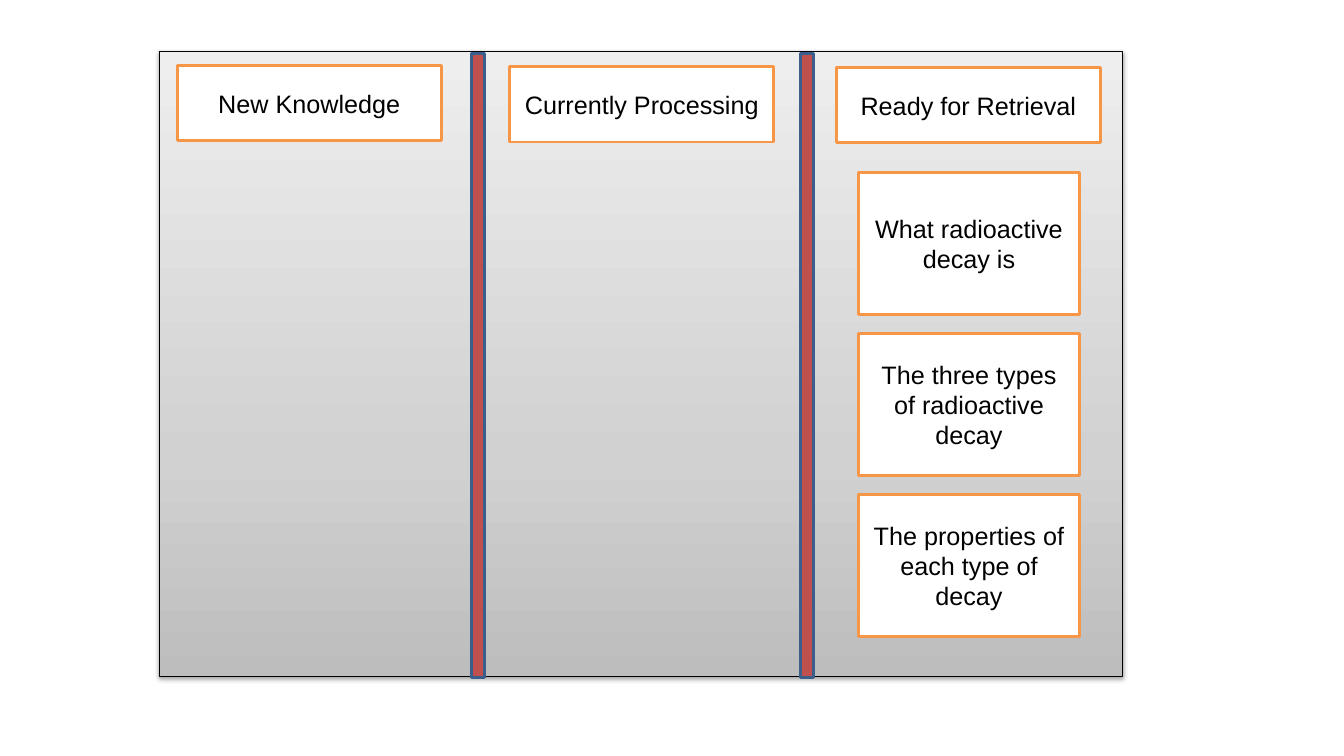
import lxml.etree
import pptx
import pptx.dml.color
import pptx.enum.shapes
import pptx.enum.text
import pptx.oxml.ns
import pptx.util

Cm = pptx.util.Cm
Pt = pptx.util.Pt
RGBColor = pptx.dml.color.RGBColor
qn = pptx.oxml.ns.qn

BLACK = RGBColor(0x00, 0x00, 0x00)
WHITE = RGBColor(0xFF, 0xFF, 0xFF)
ORANGE = RGBColor(0xF7, 0x96, 0x46)
RED = RGBColor(0xC0, 0x50, 0x4D)
BLUE = RGBColor(0x3A, 0x5F, 0x8C)
BOARD_STOPS = [
    (0, RGBColor(0xBD, 0xBD, 0xBD)),
    (35, RGBColor(0xD1, 0xD1, 0xD1)),
    (100, RGBColor(0xEE, 0xEE, 0xEE)),
]

FONT_FORMAT = {"name": "Arial", "size": Pt(18)}
FRAME_FORMAT = {
    "word_wrap": True,
    "vertical_anchor": pptx.enum.text.MSO_ANCHOR.MIDDLE,
}

HEADINGS = [
    ("New Knowledge", 4.47, 1.65),
    ("Currently Processing", 12.85, 1.68),
    ("Ready for Retrieval", 21.08, 1.7),
]
CARDS = [
    "What radioactive decay is",
    "The three types of radioactive decay",
    "The properties of each type of decay",
]
DIVIDER_LEFTS = [11.89, 20.17]
CARD_TOP = 4.34
CARD_PITCH = 4.06


def set_attributes(target, values):
    for name, value in values.items():
        setattr(target, name, value)


def add_rectangle(slide, left, top, width, height, line_color, line_width):
    shape = slide.shapes.add_shape(
        pptx.enum.shapes.MSO_SHAPE.RECTANGLE,
        Cm(left), Cm(top), Cm(width), Cm(height),
    )
    shape.line.color.rgb = line_color
    shape.line.width = Pt(line_width)
    shape.shadow.inherit = False
    return shape


def add_color(parent, color):
    return lxml.etree.SubElement(parent, qn("a:srgbClr"), val=str(color))


def add_board(slide):
    shape = add_rectangle(slide, 4.01, 1.3, 24.28, 15.75, BLACK, 0.75)
    shape.fill.gradient()
    shape.fill.gradient_angle = 90
    properties = shape._element.spPr
    stops = properties.find(".//" + qn("a:gsLst"))
    for stop in list(stops):
        stops.remove(stop)
    for position, color in BOARD_STOPS:
        stop = lxml.etree.SubElement(stops, qn("a:gs"), pos=str(position * 1000))
        add_color(stop, color)
    shadow = lxml.etree.SubElement(
        properties.find(qn("a:effectLst")), qn("a:outerShdw"),
        blurRad=str(Pt(3.1)), dist=str(Pt(1.6)), dir="5400000", rotWithShape="0",
    )
    lxml.etree.SubElement(add_color(shadow, BLACK), qn("a:alpha"), val="38000")


def add_divider(slide, left):
    shape = add_rectangle(slide, left, 1.35, 0.33, 15.72, BLUE, 2)
    shape.fill.solid()
    shape.fill.fore_color.rgb = RED


def add_label(slide, text, left, top, width, height):
    shape = add_rectangle(slide, left, top, width, height, ORANGE, 2)
    shape.fill.solid()
    shape.fill.fore_color.rgb = WHITE
    set_attributes(shape.text_frame, FRAME_FORMAT)
    paragraph = shape.text_frame.paragraphs[0]
    paragraph.alignment = pptx.enum.text.PP_ALIGN.CENTER
    run = paragraph.add_run()
    run.text = text
    set_attributes(run.font, FONT_FORMAT)
    run.font.color.rgb = BLACK


def main():
    presentation = pptx.Presentation()
    presentation.slide_width = Cm(33.87)
    presentation.slide_height = Cm(19.05)
    slide = presentation.slides.add_slide(presentation.slide_layouts[6])
    add_board(slide)
    for left in DIVIDER_LEFTS:
        add_divider(slide, left)
    for text, left, top in HEADINGS:
        add_label(slide, text, left, top, 6.65, 1.9)
    for index, text in enumerate(CARDS):
        add_label(slide, text, 21.64, CARD_TOP + index * CARD_PITCH, 5.56, 3.58)
    presentation.save("out.pptx")


if __name__ == "__main__":
    main()
